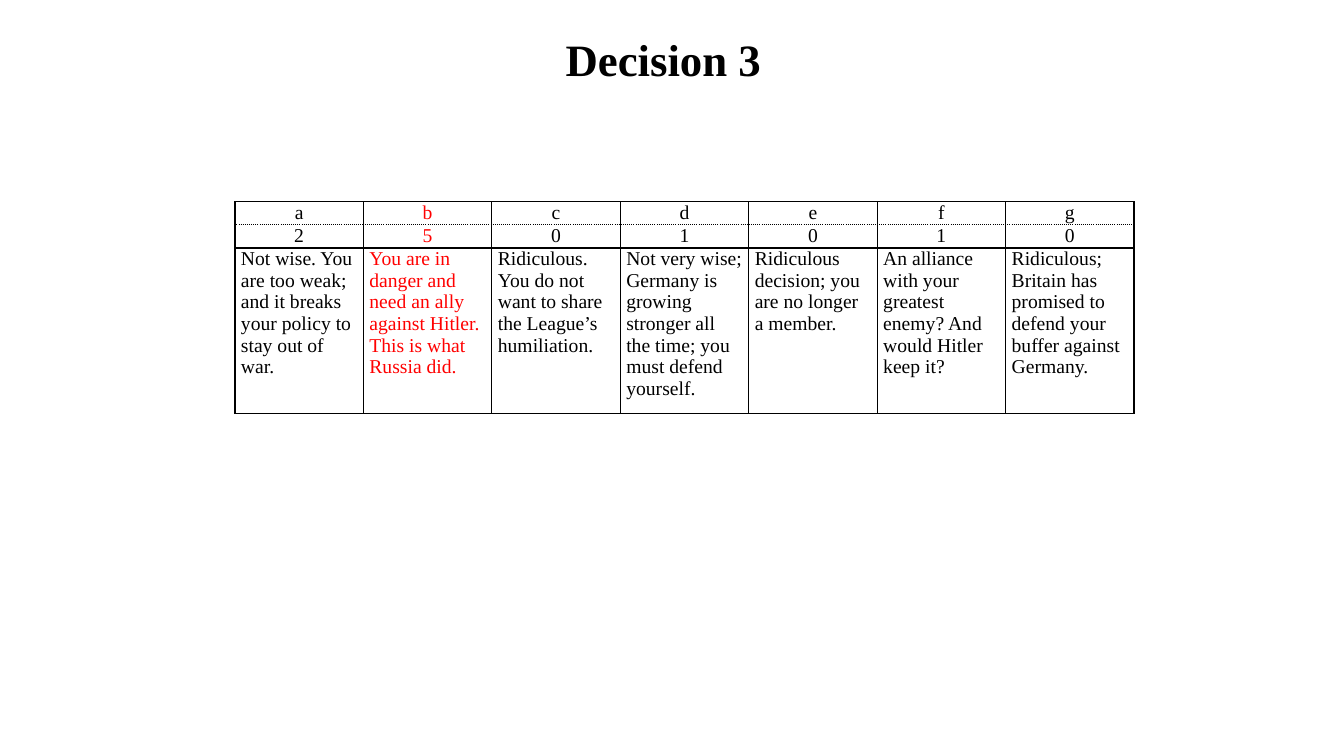
import pptx
import pptx.util
import pptx.dml.color
import pptx.enum.text
import pptx.oxml.ns
import lxml.etree

PX = 9144  # EMU per px, 100 px to the inch
FONT = "Times New Roman"
COLORS = {"text": "000000", "best": "FF0000", "border": "000000"}
BEST_OPTION = "b"
ROW_HEIGHTS = [23, 23, 164]
OPTIONS = [
    ("a", "2", "Not wise. You are too weak; and it breaks your policy to stay out of war."),
    ("b", "5", "You are in danger and need an ally against Hitler. This is what Russia did."),
    ("c", "0", "Ridiculous. You do not want to share the League’s humiliation."),
    ("d", "1", "Not very wise; Germany is growing stronger all the time; you must defend yourself."),
    ("e", "0", "Ridiculous decision; you are no longer a member."),
    ("f", "1", "An alliance with your greatest enemy? And would Hitler keep it?"),
    ("g", "0", "Ridiculous; Britain has promised to defend your buffer against Germany."),
]


def px(n):
    return pptx.util.Emu(n * PX)


def format_text(tf, size, color, bold=False, centered=True):
    align = pptx.enum.text.PP_ALIGN
    for p in tf.paragraphs:
        p.alignment = align.CENTER if centered else align.LEFT
        for r in p.runs:
            r.font.name = FONT
            r.font.size = pptx.util.Pt(size)
            r.font.bold = bold
            r.font.color.rgb = pptx.dml.color.RGBColor.from_string(COLORS[color])


def set_borders(cell, dotted_sides):
    qn = pptx.oxml.ns.qn
    tc_pr = cell._tc.get_or_add_tcPr()
    # Border lines come before the fill, in this order
    for i, side in enumerate("LRTB"):
        ln = lxml.etree.Element(qn("a:ln" + side), w="12700")
        fill = lxml.etree.SubElement(ln, qn("a:solidFill"))
        lxml.etree.SubElement(fill, qn("a:srgbClr"), val=COLORS["border"])
        dash = "sysDot" if side in dotted_sides else "solid"
        lxml.etree.SubElement(ln, qn("a:prstDash"), val=dash)
        tc_pr.insert(i, ln)


def add_title(s, text, left, top, width, height):
    tf = s.shapes.add_textbox(px(left), px(top), px(width), px(height)).text_frame
    tf.word_wrap = True
    tf.vertical_anchor = pptx.enum.text.MSO_ANCHOR.MIDDLE
    tf.text = text
    format_text(tf, 32, "text", bold=True)


def add_options_table(s, left, top, width):
    table = s.shapes.add_table(len(ROW_HEIGHTS), len(OPTIONS), px(left), px(top),
                               px(width), px(sum(ROW_HEIGHTS))).table
    table.first_row = table.horz_banding = False
    for row, height in zip(table.rows, ROW_HEIGHTS):
        row.height = px(height)

    # One column per option: letter, score, explanation
    for col, option in enumerate(OPTIONS):
        color = "best" if option[0] == BEST_OPTION else "text"
        for row, text in enumerate(option):
            cell = table.cell(row, col)
            cell.margin_left = cell.margin_right = px(6)
            cell.margin_top = cell.margin_bottom = 0
            cell.fill.background()
            cell.text_frame.text = text
            format_text(cell.text_frame, 14, color, centered=row < 2)
            set_borders(cell, ["B", "T", ""][row])


def main():
    prs = pptx.Presentation()
    prs.slide_width, prs.slide_height = px(1333), px(750)
    s = prs.slides.add_slide(prs.slide_layouts[6])
    add_options_table(s, 233, 200, 892)
    add_title(s, "Decision 3", 533, 26, 250, 64)
    prs.save("out.pptx")


if __name__ == "__main__":
    main()
